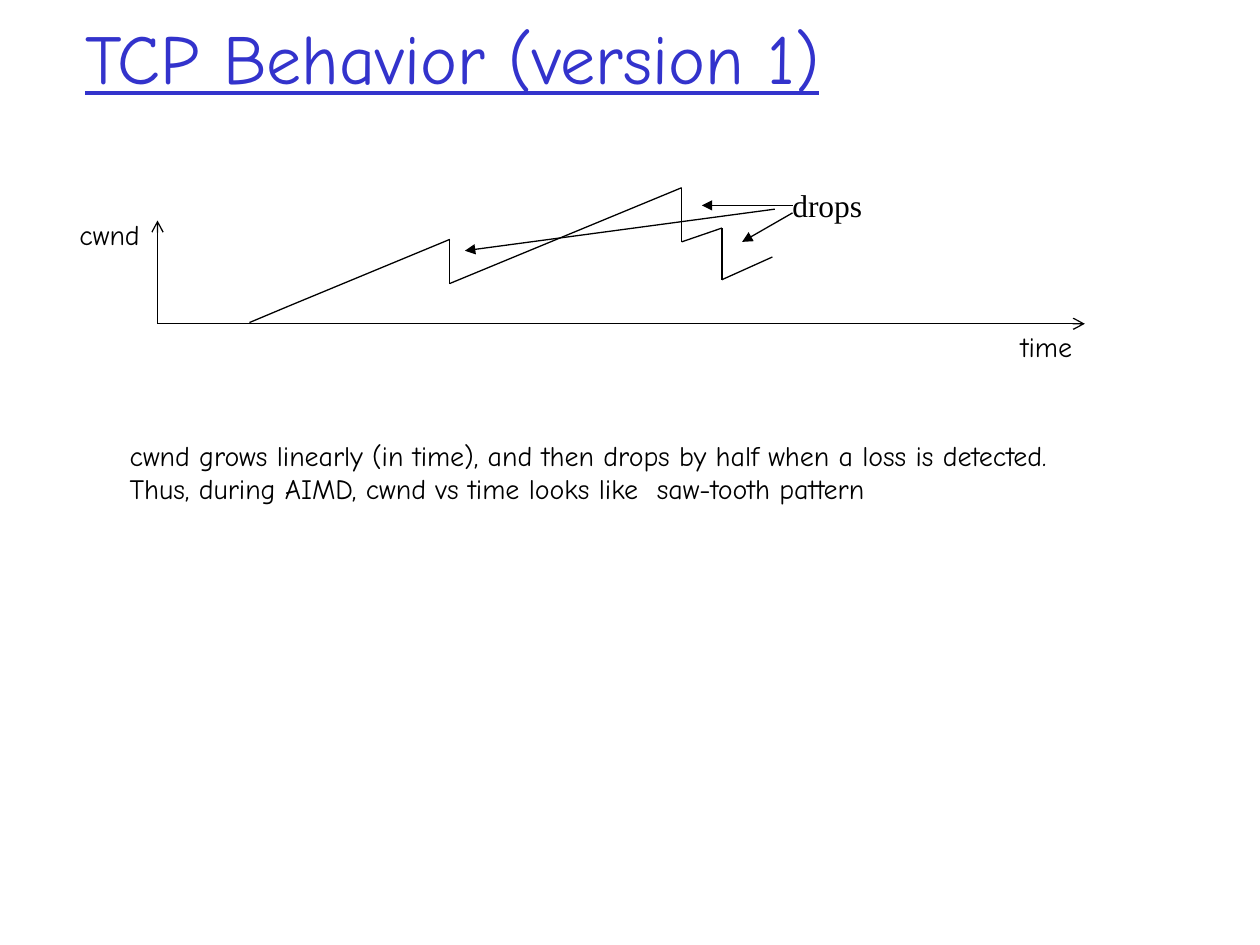
from itertools import pairwise

from lxml.etree import SubElement
from pptx import Presentation
from pptx.dml.color import RGBColor
from pptx.enum.shapes import MSO_CONNECTOR
from pptx.enum.text import MSO_ANCHOR, PP_ALIGN
from pptx.oxml.ns import qn
from pptx.util import Inches, Pt

COLORS = {"ink": "000000", "title": "3333CC"}
HAND, SERIF = "Comic Neue", "Times New Roman"

# All places are columns and rows of a grid with 100 cells to the inch.
CELL = Inches(0.01)
COLUMNS, ROWS = 1000, 750

TITLE = ("TCP Behavior (version 1)", (58, 6, 850, 77))
EXPLANATION = (
    "cwnd grows linearly (in time), and then drops by half when a loss is detected.\n"
    "Thus, during AIMD, cwnd vs time looks like  saw-tooth pattern",
    (93, 343, 822, 64),
)
AXIS_LABELS = [("time", (797, 257, 67, 37)), ("cwnd", (51, 168, 72, 37))]
DROPS_LABEL = ("drops", (619, 143, 76, 40))

ORIGIN = (125, 257)
AXIS_ENDS = [(125, 175), (861, 257)]
SAW_TOOTH = [(198, 256), (229, 243), (357, 190), (357, 225), (541, 149),
             (541, 192), (573, 181), (573, 222), (613, 204)]
DROP_ARROWS = [((629, 163), (557, 163)),
               ((629, 169), (589, 192)),
               ((615, 166), (369, 199))]


def add_line(slide, start, end, arrowhead=None):
    line = slide.shapes.add_connector(
        MSO_CONNECTOR.STRAIGHT, *(CELL * position for position in start + end))
    line.line.color.rgb = RGBColor.from_string(COLORS["ink"])
    line.line.width = Pt(0.75)
    if arrowhead:
        SubElement(line.line._get_or_add_ln(), qn("a:tailEnd"), type=arrowhead)
    SubElement(line._element.spPr, qn("a:effectLst"))


def add_text(slide, text, box, size=16, font=HAND, color="ink",
             alignment=PP_ALIGN.LEFT, wrap=False, underline=False,
             anchor=MSO_ANCHOR.TOP):
    shape = slide.shapes.add_textbox(*(CELL * length for length in box))
    frame = shape.text_frame
    frame.text = text
    frame.word_wrap = wrap
    frame.vertical_anchor = anchor
    for paragraph in frame.paragraphs:
        paragraph.alignment = alignment
        for run in paragraph.runs:
            run.font.name = font
            run.font.size = Pt(size)
            run.font.underline = underline
            run.font.color.rgb = RGBColor.from_string(COLORS[color])


def main():
    presentation = Presentation()
    presentation.slide_width = CELL * COLUMNS
    presentation.slide_height = CELL * ROWS
    slide = presentation.slides.add_slide(presentation.slide_layouts[6])

    for end in AXIS_ENDS:
        add_line(slide, ORIGIN, end, "arrow")
    for start, end in pairwise(SAW_TOOTH):
        add_line(slide, start, end)
    for start, end in DROP_ARROWS:
        add_line(slide, start, end, "triangle")

    add_text(slide, *TITLE, size=40, color="title", wrap=True, underline=True,
             anchor=MSO_ANCHOR.MIDDLE)
    add_text(slide, *EXPLANATION)
    add_text(slide, *DROPS_LABEL, size=18, font=SERIF)
    for text, box in AXIS_LABELS:
        add_text(slide, text, box, alignment=PP_ALIGN.CENTER)

    presentation.save("out.pptx")


if __name__ == "__main__":
    main()
